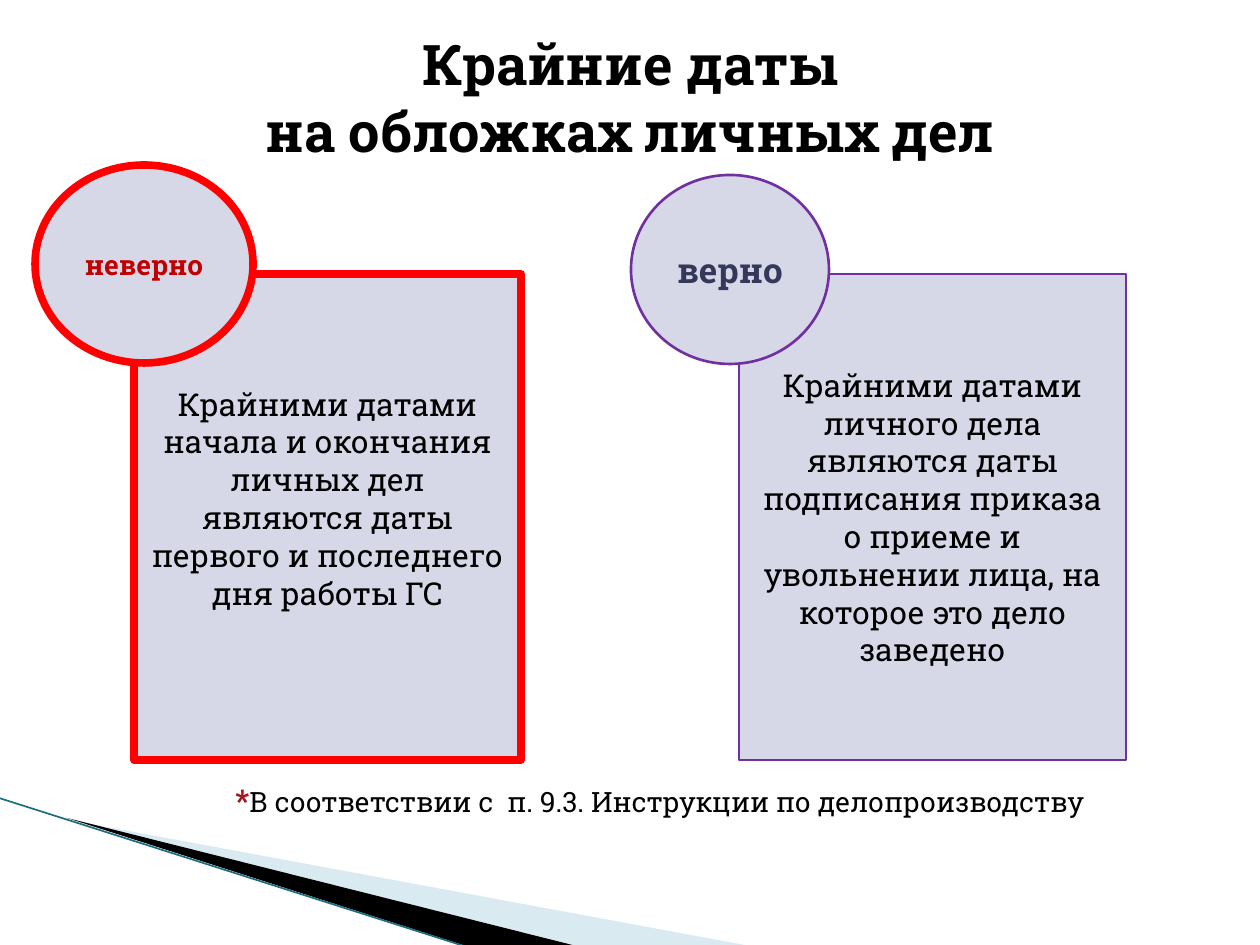
from lxml.etree import SubElement
from pptx import Presentation
from pptx.dml.color import RGBColor
from pptx.enum.shapes import MSO_CONNECTOR, MSO_SHAPE
from pptx.enum.text import MSO_ANCHOR, MSO_AUTO_SIZE, PP_ALIGN
from pptx.oxml.ns import qn
from pptx.util import Pt

EMU_PER_PX = 914400 / 126
FONT = "Roboto Slab"
C = {"text": "000000", "panel": "D7D8E7", "red": "FF0000", "purple": "7030A0",
     "wrong": "C00000", "right": "35385A", "star": "A3171E",
     "pale": "A0CBDC", "edge": "1B6E82"}

TITLE = ["Крайние даты", "на обложках личных дел"]
NOTE = [("*", 18, "star", True),
        ("В соответствии с  п. 9.3. Инструкции по делопроизводству", 16, "text", False)]
PANELS = [
    {"left": 134, "line": "red", "width": 4.33, "bottom_inset": 44,
     "body": "Крайними датами начала и окончания личных дел являются даты "
             "первого и последнего дня работы ГС",
     "badge": (35, 165, 218, 198), "label": ("неверно", 16, "wrong", True)},
    {"left": 739, "line": "purple", "width": 1.5, "bottom_inset": 6,
     "body": "Крайними датами личного дела являются даты подписания приказа "
             "о приеме и увольнении лица, на которое это дело заведено",
     "badge": (631, 175, 198, 189), "label": ("верно", 20, "right", True)},
]
PANEL_TOP, PANEL_W, PANEL_H = 274, 387, 486
WEDGES = [
    ([(69, 820), (750, 946), (575, 946)], "pale", 40),
    ([(67, 818), (576, 946), (469, 947)], "text", 100),
]


def px(n):
    return round(n * EMU_PER_PX)


def rgb(name):
    return RGBColor.from_string(C[name])


def add_run(p, text, size, color, bold):
    r = p.add_run()
    r.text = text
    r.font.name, r.font.size, r.font.bold = FONT, Pt(size), bold
    r.font.color.rgb = rgb(color)


def add_wedge(shapes, points, color, opacity):
    builder = shapes.build_freeform(*points[0], scale=EMU_PER_PX)
    builder.add_line_segments(points[1:], close=True)
    sp = builder.convert_to_shape()
    sp.shadow.inherit = False
    sp.line.fill.background()
    sp.fill.solid()
    sp.fill.fore_color.rgb = rgb(color)
    if opacity < 100:
        clr = sp.fill._xPr.find(qn("a:solidFill"))[0]
        SubElement(clr, qn("a:alpha"), val=str(opacity * 1000))


def add_panel_shape(shapes, kind, box, line, width, run):
    sp = shapes.add_shape(kind, *map(px, box))
    sp.shadow.inherit = False
    sp.fill.solid()
    sp.fill.fore_color.rgb = rgb("panel")
    sp.line.color.rgb = rgb(line)
    sp.line.width = Pt(width)
    tf = sp.text_frame
    tf.word_wrap = True
    tf.vertical_anchor = MSO_ANCHOR.MIDDLE
    p = tf.paragraphs[0]
    p.alignment = PP_ALIGN.CENTER
    add_run(p, *run)
    return sp


prs = Presentation()
prs.slide_width, prs.slide_height = px(1260), px(945)
s = prs.slides.add_slide(prs.slide_layouts[5])

for wedge in WEDGES:
    add_wedge(s.shapes, *wedge)
edge = s.shapes.add_connector(MSO_CONNECTOR.STRAIGHT, px(-1), px(798), px(467), px(947))
edge.line.color.rgb = rgb("edge")
edge.line.width = Pt(0.95)
SubElement(edge._element.spPr, qn("a:effectLst"))

for panel in PANELS:
    box = (panel["left"], PANEL_TOP, PANEL_W, PANEL_H)
    sp = add_panel_shape(s.shapes, MSO_SHAPE.RECTANGLE, box, panel["line"],
                         panel["width"], (panel["body"], 18, "text", False))
    sp.text_frame.margin_bottom = px(panel["bottom_inset"])
for panel in PANELS:
    add_panel_shape(s.shapes, MSO_SHAPE.OVAL, panel["badge"], panel["line"],
                    panel["width"], panel["label"])

note = s.shapes.add_textbox(px(223), px(775), px(890), px(50))
note.text_frame.word_wrap = False
for run in NOTE:
    add_run(note.text_frame.paragraphs[0], *run)

title = s.shapes.title
title.left, title.top, title.width, title.height = map(px, (35, 23, 1191, 149))
tf = title.text_frame
tf.auto_size = MSO_AUTO_SIZE.NONE
tf.vertical_anchor = MSO_ANCHOR.TOP
for i, text in enumerate(TITLE):
    p = tf.add_paragraph() if i else tf.paragraphs[0]
    p.alignment = PP_ALIGN.CENTER
    add_run(p, text, 32, "text", True)

prs.save("out.pptx")
